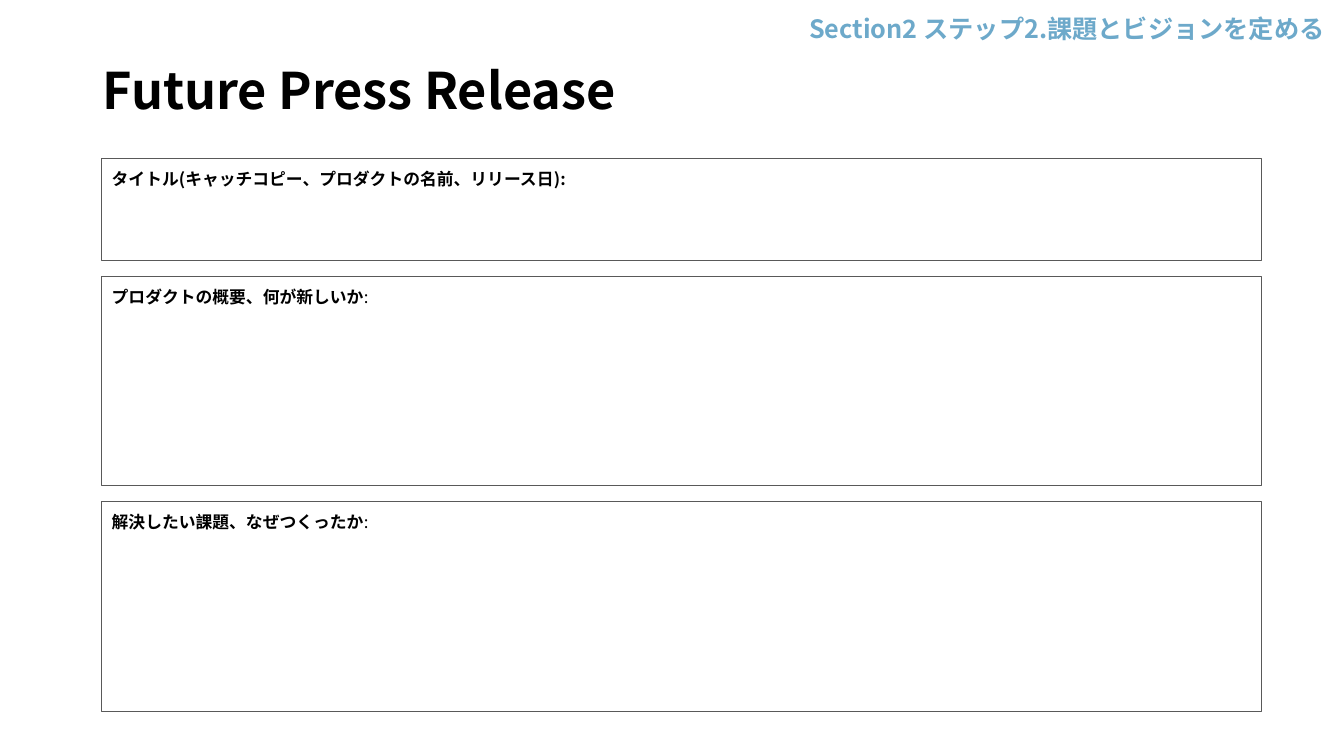
import pptx
import pptx.util
import pptx.dml.color
import pptx.enum.shapes
import pptx.enum.text
import pptx.oxml
import pptx.oxml.ns

WIDE, HIGH = 13.33, 7.5
FONT = "Noto Sans CJK JP"
HUES = {"ink": "000000", "paper": "FFFFFF", "edge": "595959", "step": "6DA9CA"}
TITLE = [("Future Press Release", True)]
STEP = [("Section2 ステップ2.課題とビジョンを定める", True)]
FIELDS = [
    (1.01, [("タイトル(キャッチコピー、プロダクトの名前、リリース日):", True)]),
    (2.08, [("プロダクトの概要、何が新しいか", True), (":", False)]),
    (2.08, [("解決したい課題、なぜつくったか", True), (":", False)]),
]
LEFT, TOP, SPAN, GAP = 1.01, 1.57, 11.5, 0.16

inch = pptx.util.Inches
Align = pptx.enum.text.PP_ALIGN
Anchor = pptx.enum.text.MSO_ANCHOR


def hue(name):
    return pptx.dml.color.RGBColor.from_string(HUES[name])


def write(shape, runs, size, ink="ink", align=Align.LEFT, anchor=Anchor.TOP):
    frame = shape.text_frame
    frame.word_wrap = True
    frame.vertical_anchor = anchor
    para = frame.paragraphs[0]
    para.alignment = align
    for text, bold in runs:
        run = para.add_run()
        run.text = text
        font = run.font
        font.name = FONT
        font.size = pptx.util.Pt(size)
        font.bold = bold
        font.color.rgb = hue(ink)
        east = pptx.oxml.parse_xml(
            f'<a:ea {pptx.oxml.ns.nsdecls("a")} typeface="{FONT}"/>')
        run.font._element.find(pptx.oxml.ns.qn("a:latin")).addnext(east)
    return frame


def main():
    deck = pptx.Presentation()
    deck.slide_width, deck.slide_height = inch(WIDE), inch(HIGH)
    shapes = deck.slides.add_slide(deck.slide_layouts[6]).shapes

    title = shapes.add_textbox(inch(0.92), inch(0.52), inch(SPAN), inch(0.72))
    frame = write(title, TITLE, 36, anchor=Anchor.BOTTOM)
    frame.paragraphs[0].line_spacing = 0.9

    top = TOP
    for tall, runs in FIELDS:
        box = shapes.add_shape(pptx.enum.shapes.MSO_SHAPE.RECTANGLE,
                               inch(LEFT), inch(top), inch(SPAN), inch(tall))
        box.shadow.inherit = False
        box.fill.solid()
        box.fill.fore_color.rgb = hue("paper")
        box.line.color.rgb = hue("edge")
        box.line.width = pptx.util.Pt(0.75)
        frame = write(box, runs, 12)
        frame.margin_left = frame.margin_right = inch(0.1)
        frame.margin_top = frame.margin_bottom = inch(0.1)
        top += tall + GAP

    step = shapes.add_textbox(inch(6.57), inch(0.08), inch(WIDE / 2), inch(0.4))
    frame = write(step, STEP, 18, "step", Align.RIGHT)
    frame.auto_size = pptx.enum.text.MSO_AUTO_SIZE.SHAPE_TO_FIT_TEXT

    deck.save("out.pptx")


if __name__ == "__main__":
    main()
